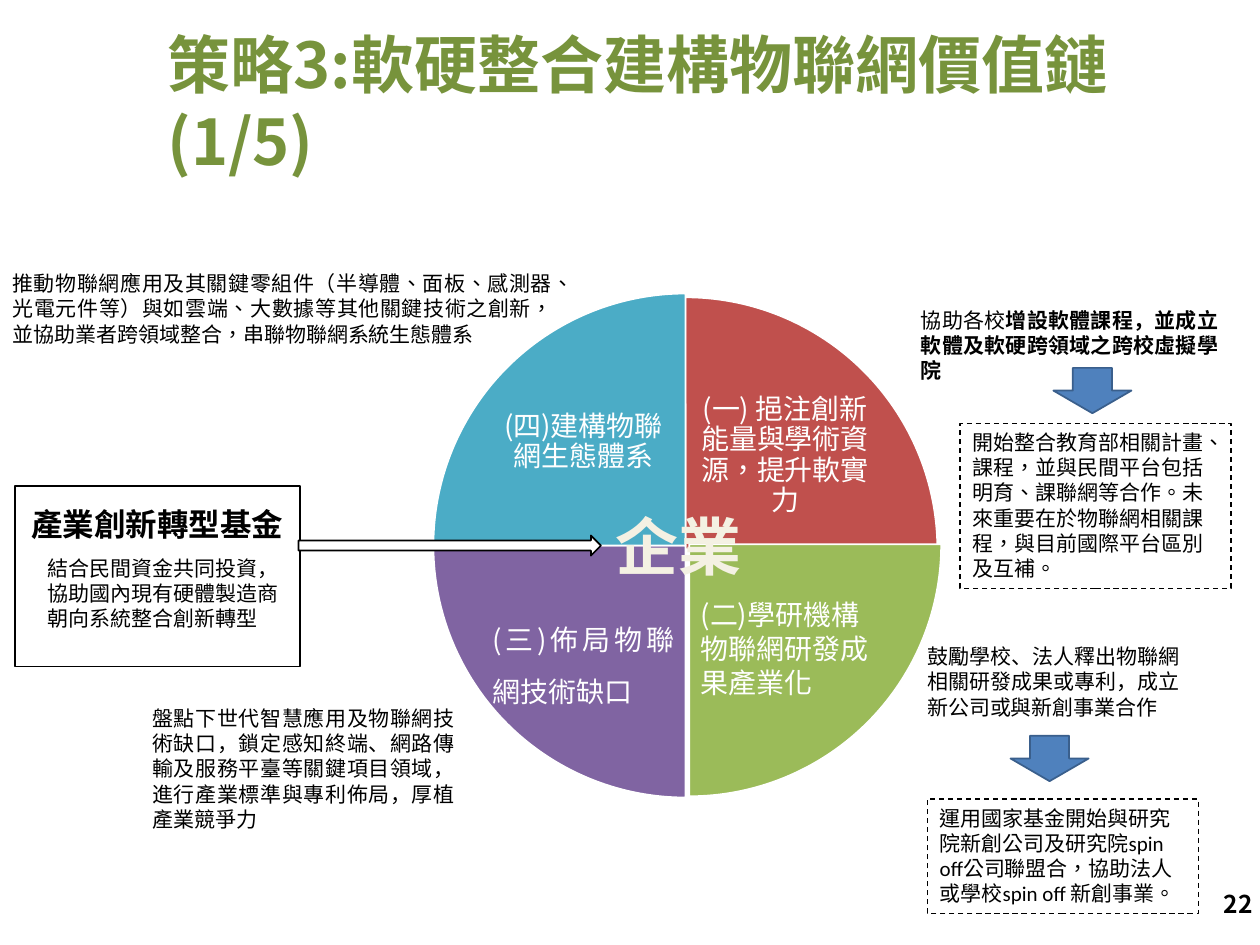
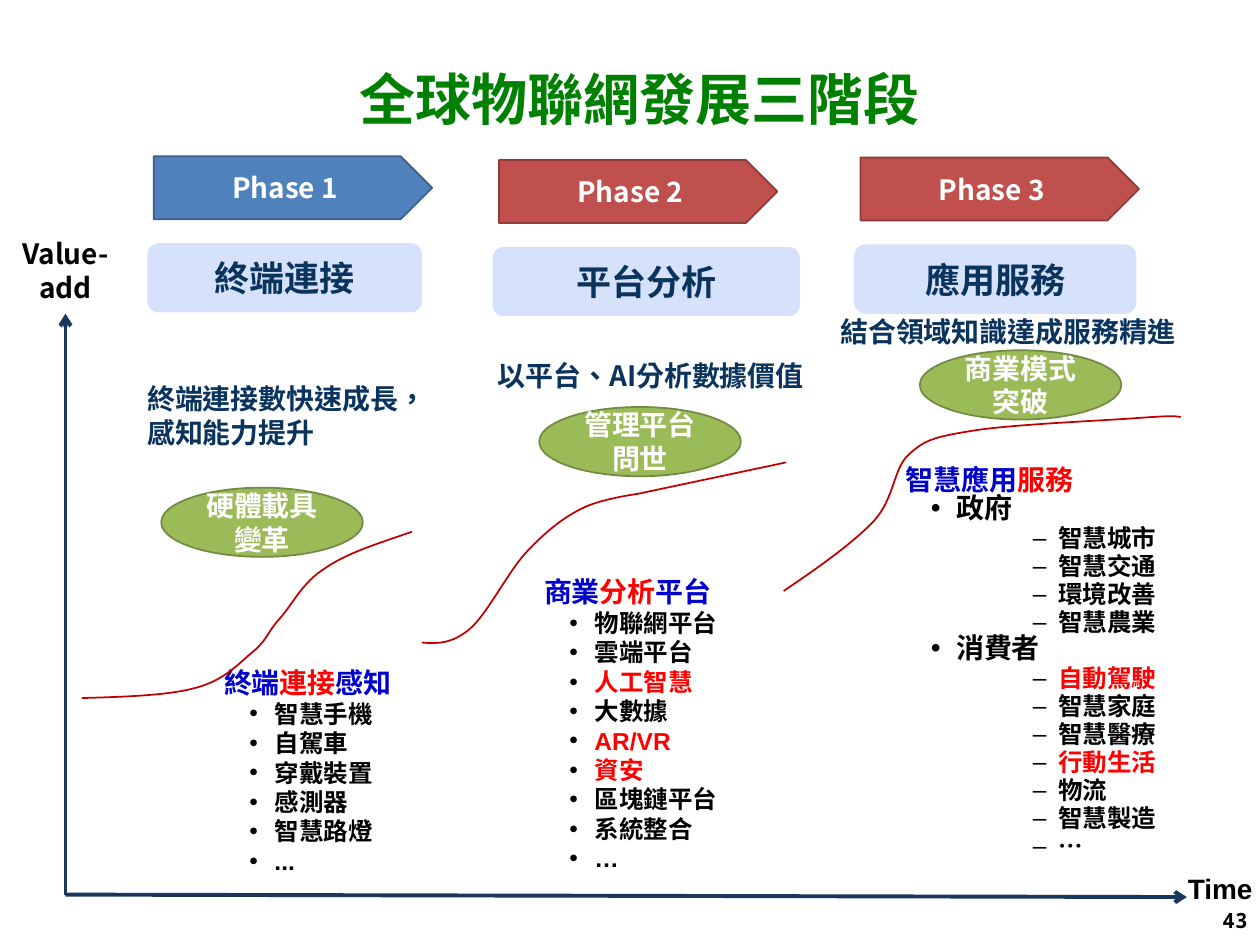
from dataclasses import dataclass

from lxml import etree
from pptx import Presentation
from pptx.dml.color import RGBColor
from pptx.enum.dml import MSO_LINE
from pptx.enum.shapes import MSO_CONNECTOR, MSO_SHAPE
from pptx.enum.text import MSO_ANCHOR, PP_ALIGN
from pptx.oxml.ns import qn
from pptx.util import Inches, Pt

LEFT, MID, RIGHT, JUST = PP_ALIGN.LEFT, PP_ALIGN.CENTER, PP_ALIGN.RIGHT, PP_ALIGN.JUSTIFY
TOP, CENTER = MSO_ANCHOR.TOP, MSO_ANCHOR.MIDDLE
RECT, ROUND, OVAL = MSO_SHAPE.RECTANGLE, MSO_SHAPE.ROUNDED_RECTANGLE, MSO_SHAPE.OVAL
PIE, PLATE = MSO_SHAPE.PIE, MSO_SHAPE.PENTAGON
DOWN, ARROW = MSO_SHAPE.DOWN_ARROW, MSO_SHAPE.RIGHT_ARROW
DASH, STRAIGHT = MSO_LINE.DASH, MSO_CONNECTOR.STRAIGHT


@dataclass(frozen=True)
class Theme:
    """Colours, faces and type sizes of the deck."""
    black: str = "000000"
    white: str = "FFFFFF"
    red: str = "C0504D"
    maroon: str = "8E3B39"
    green: str = "9BBB59"
    moss: str = "738A42"
    purple: str = "8064A2"
    teal: str = "4BACC6"
    blue: str = "4F81BD"
    steel: str = "3A5F8C"
    olive: str = "77933C"
    leaf: str = "008000"
    cream: str = "F4F1E3"
    ice: str = "D6E2FB"
    navy: str = "0A345D"
    axis: str = "17375E"
    curve: str = "C00000"
    royal: str = "0000CC"
    alert: str = "FF0000"
    cjk: str = "Noto Sans CJK SC"
    calm: str = "Calibri"
    plain: str = "Arial"
    mono: str = "Noto Sans Mono"
    tongue: str = "zh-TW"
    body: float = 12
    item: float = 14
    label: float = 16
    fund: float = 18
    card: float = 20
    head: float = 32
    title: float = 36
    lead: float = 1.2


T = Theme()

WEDGES = [
    (0, 0.04, 162, 0, T.red, "(一) 挹注創新能量與學術資源，提升軟實力", 2.05, 0.7, MID, 17.2),
    (0.03, 0, 0, 54, T.green, "(二)學研機構物聯網研發成果產業化", 2.1, 2.23, LEFT, None),
    (0, 0.01, 54, 108, T.purple, "(三)佈局物聯網技術缺口", 0.45, 2.29, JUST, 30),
    (0, 0.01, 108, 162, T.teal, "(四)建構物聯網生態體系", 0.45, 0.59, MID, 17.2),
]

STAGES = [
    dict(at=(1.17, 1.24), name="Phase 1", fill=T.blue, edge=T.steel, card="終端連接", wide=2.18,
         note=(-0.1, 1.74, 2.6), notes=["終端連接數快速成長，", "感知能力提升"],
         oval=(0.11, 2.63), leap="硬體載具變革", list=(0.51, 3.99, 2.29),
         head=["終端", "連接", "感知"], face=T.plain, lead=None, size=T.item,
         items=["•智慧手機", "•自駕車", "•穿戴裝置", "•感測器", "•智慧路燈", "•..."],
         start=(-0.52, 4.3), curve=[
             (0.34, -0.01), (0.68, -0.02), (0.9, -0.08), (1.13, -0.14), (1.24, -0.27),
             (1.36, -0.37), (1.47, -0.46), (1.47, -0.52), (1.57, -0.63), (1.67, -0.74),
             (1.75, -0.92), (1.93, -1.03), (2.1, -1.15), (2.36, -1.23), (2.62, -1.32)]),
    dict(at=(3.91, 1.27), name="Phase 2", fill=T.red, edge=T.maroon, card="平台分析", wide=2.44,
         note=(-0.06, 1.53, 2.67), notes=["以平台、AI分析數據價值"],
         oval=(0.37, 1.96), leap="管理平台問世", list=(0.31, 3.24, 1.8),
         head=["商業", "分析", "平台"], face=T.plain, lead=None, size=T.item,
         items=["•物聯網平台", "•雲端平台", "•人工智慧", "•大數據", "•AR/VR", "•資安",
                "•區塊鏈平台", "•系統整合", "•…"],
         start=(-0.56, 3.83), curve=[
             (0.12, 0.01), (0.24, 0.01), (0.38, -0.11), (0.52, -0.23), (0.68, -0.56),
             (0.83, -0.72), (0.98, -0.88), (1.12, -0.99), (1.26, -1.06), (1.41, -1.14),
             (1.71, -1.18), (1.71, -1.18), (2.89, -1.43)]),
    dict(at=(6.78, 1.25), name="Phase 3", fill=T.red, edge=T.maroon, card="應用服務", wide=2.24,
         note=(-0.21, 1.2, 3.09), notes=["結合領域知識達成服務精進"],
         oval=(0.52, 1.53), leap="商業模式突破", list=(0.31, 2.42, 3.03),
         head=["智慧應用", "服務"], face=T.cjk, lead=16, size=T.label,
         items=["•政府", "–智慧城市", "–智慧交通", "–環境改善", "–智慧農業", "•消費者",
                "–自動駕駛", "–智慧家庭", "–智慧醫療", "–行動生活", "–物流", "–智慧製造", "–…"],
         start=(-0.56, 3.44), curve=[
             (0.28, -0.19), (0.55, -0.38), (0.72, -0.56), (0.88, -0.74), (0.87, -0.97),
             (0.99, -1.08), (1.12, -1.2), (1.19, -1.22), (1.49, -1.27), (1.79, -1.32),
             (2.5, -1.35), (2.78, -1.37), (3.05, -1.39), (3.1, -1.39), (3.15, -1.38)]),
]
HOT = {"人工智慧", "AR/VR", "資安", "自動駕駛", "行動生活"}


def tint(text):
    """Turn a hex string into a colour."""
    return RGBColor.from_string(text)


def add_run(para, text, size, color, bold, face, lang):
    """Add one formatted run to a paragraph."""
    run = para.add_run()
    run.text = text
    for key, value in dict(size=Pt(size), bold=bold, name=face).items():
        setattr(run.font, key, value)
    run.font.color.rgb = tint(color)
    props = run.font._element
    props.find(qn("a:latin")).addnext(etree.Element(qn("a:ea"), typeface=T.cjk))
    if lang:
        props.set("lang", lang)


def add_mark(para, mark):
    """Give a paragraph a black bullet with a hanging indent."""
    props = para._p.get_or_add_pPr()
    props.set("marL", str(Inches(0.4 if mark == "•" else 1.21)))
    props.set("indent", str(Inches(-0.2)))
    shade = etree.SubElement(props, qn("a:buClr"))
    etree.SubElement(shade, qn("a:srgbClr"), val=T.black)
    etree.SubElement(props, qn("a:buFont"), typeface=T.plain)
    etree.SubElement(props, qn("a:buChar"), char=mark)


def write(shape, rows, size=T.body, color=T.black, bold=False, face=T.cjk, lang=None,
          align=LEFT, anchor=TOP, lead=None, inset=(0.1, 0.05)):
    """Fill a shape with rows; a row is text or a list of (text, changes)."""
    frame = shape.text_frame
    across, down = map(Inches, inset)
    form = dict(word_wrap=True, vertical_anchor=anchor, margin_left=across,
                margin_right=across, margin_top=down, margin_bottom=down)
    for key, value in form.items():
        setattr(frame, key, value)
    for spot, row in enumerate(rows):
        para = frame.add_paragraph() if spot else frame.paragraphs[0]
        runs = [(row, {})] if isinstance(row, str) else row
        looks = [dict(dict(size=size, color=color, bold=bold, face=face, lang=lang), **more)
                 for _, more in runs]
        mark = looks[0].pop("mark", None)
        para.alignment = align
        para.line_spacing = Pt(lead or round(looks[0]["size"] * T.lead, 1))
        if mark:
            add_mark(para, mark)
        for (text, _), look in zip(runs, looks):
            add_run(para, text, **look)


def add_text(slide, box, rows, **look):
    """Add a text box."""
    write(slide.shapes.add_textbox(*map(Inches, box)), rows, **look)


def add_form(slide, kind, box, fill=None, edge=None, width=1, dash=None):
    """Add a preset shape without shadow."""
    shape = slide.shapes.add_shape(kind, *map(Inches, box))
    paint(shape, fill, edge, width, dash)
    return shape


def paint(shape, fill, edge, width, dash=None):
    """Set the fill and outline of a shape."""
    shape.shadow.inherit = False
    for part, color in ((shape.fill, fill), (shape.line.fill, edge)):
        if color:
            part.solid()
            part.fore_color.rgb = tint(color)
        else:
            part.background()
    if edge:
        shape.line.width = Pt(width)
    if dash:
        shape.line.dash_style = dash


def add_title(slide, box, text, **look):
    """Add the slide title."""
    add_text(slide, box, [text], bold=True, anchor=CENTER, **look)


def add_page(slide, box, text, **look):
    """Add the page number."""
    add_text(slide, box, [text], bold=True, align=RIGHT, anchor=CENTER, **look)


def add_wheel(slide, x, y):
    """Draw the four wedges with their labels and the hub word."""
    for dx, dy, start, end, fill, *_ in WEDGES:
        wedge = add_form(slide, PIE, (x + dx, y + dy, 4, 4), fill, T.white)
        wedge.adjustments[0], wedge.adjustments[1] = start, end
    for *_, text, dx, dy, align, lead in WEDGES:
        add_text(slide, (x + dx, y + dy, 1.48, 1.19), [text], size=T.label, color=T.white,
                 align=align, anchor=CENTER, lead=lead, inset=(0.02, 0.02), lang=T.tongue)
    add_text(slide, (x + 1.35, y + 1.65, 1.31, 0.71), ["企業"], size=T.title,
             color=T.cream, bold=True, anchor=CENTER)


def add_fund(slide, x, y):
    """Draw the fund panel and its arrow to the hub."""
    add_form(slide, RECT, (x, y, 2.26, 1.43), edge=T.black)
    add_text(slide, (x + 0.03, y + 0.18, 2.3, 0.33), ["產業創新轉型基金"],
             size=T.fund, bold=True, lead=16)
    add_text(slide, (x + 0.16, y + 0.5, 2.14, 0.71),
             ["結合民間資金共同投資，協助國內現有硬體製造商朝向系統整合創新轉型"])
    add_form(slide, ARROW, (x + 2.25, y + 0.39, 2.4, 0.16), T.white, T.black)


def add_step(slide, x, y, high, dx, dy, text):
    """Draw a block arrow above a dashed box."""
    add_form(slide, DOWN, (x + dx, y + dy, 0.62, 0.36), T.blue, T.steel)
    panel = add_form(slide, RECT, (x, y, 2.15, high), edge=T.black, width=0.75, dash=DASH)
    write(panel, [text], face=T.calm, lang=T.tongue)


def draw_chain(slide):
    """Build the value chain slide."""
    add_wheel(slide, 3.44, 2.32)
    notes = [
        ((7.26, 5.06, 2.2, 0.71), None,
         "鼓勵學校、法人釋出物聯網相關研發成果或專利，成立新公司或與新創事業合作"),
        ((0, 2.1, 4.49, 0.71), T.tongue,
         "推動物聯網應用及其關鍵零組件（半導體、面板、感測器、光電元件等）與如雲端、"
         "大數據等其他關鍵技術之創新，並協助業者跨領域整合，串聯物聯網系統生態體系"),
        ((7.21, 2.39, 2.56, 0.71), None,
         [("協助各校", {}),
          ("增設軟體課程，並成立軟體及軟硬跨領域之跨校虛擬學院", dict(bold=True))]),
        ((1.11, 5.55, 2.6, 1.11), None,
         "盤點下世代智慧應用及物聯網技術缺口，鎖定感知終端、網路傳輸及服務平臺等"
         "關鍵項目領域，進行產業標準與專利佈局，厚植產業競爭力"),
    ]
    for box, lang, row in notes:
        add_text(slide, box, [row], align=JUST, lang=lang)
    add_fund(slide, 0.12, 3.86)
    add_step(slide, 7.62, 3.36, 1.31, 0.74, -0.44,
             "開始整合教育部相關計畫、課程，並與民間平台包括明育、課聯網等合作。"
             "未來重要在於物聯網相關課程，與目前國際平台區別及互補。")
    add_step(slide, 7.36, 6.34, 0.91, 0.66, -0.5,
             "運用國家基金開始與研究院新創公司及研究院spin off公司聯盟合，"
             "協助法人或學校spin off 新創事業。")
    add_title(slide, (1.23, 0.06, 8.69, 1.49), "策略3:軟硬整合建構物聯網價值鏈(1/5)",
              size=T.title, color=T.olive, lead=44)
    add_page(slide, (7.71, 6.97, 2.33, 0.4), "22", size=T.item)


def add_axis(slide, x, y, dx, dy):
    """Draw an axis arrow from its origin."""
    ends = map(Inches, (x, y, x + dx, y + dy))
    axis = slide.shapes.add_connector(STRAIGHT, *ends)
    axis.line.color.rgb = tint(T.axis)
    axis.line.width = Pt(2.25)
    etree.SubElement(axis.line._get_or_add_ln(), qn("a:tailEnd"), type="arrow")
    etree.SubElement(axis._element.spPr, qn("a:effectLst"))


def add_curve(slide, x, y, knots):
    """Draw a curve, taking each three knots as a cubic and the rest as lines."""
    pen = slide.shapes.build_freeform(Inches(x), Inches(y))
    pen.add_line_segments([(Inches(x + dx), Inches(y + dy)) for dx, dy in knots], close=False)
    shape = pen.convert_to_shape()
    legs = list(shape._element.iter(qn("a:lnTo")))
    for first in range(0, len(legs) - 2, 3):
        trio = legs[first:first + 3]
        bend = etree.Element(qn("a:cubicBezTo"))
        trio[0].addprevious(bend)
        for leg in trio:
            bend.append(leg[0])
            leg.getparent().remove(leg)
    paint(shape, None, T.curve, 1)


def add_list(slide, box, stage):
    """Write the coloured heading and bulleted items of a stage."""
    rows = [[(text, dict(size=T.label, color=T.alert if spot == 1 else T.royal))
             for spot, text in enumerate(stage["head"])]]
    for mark, text in ((item[0], item[1:]) for item in stage["items"]):
        look = dict(mark=mark, size=stage["size"] if mark == "•" else T.item,
                    color=T.alert if text in HOT else T.black)
        rows.append([(text, look)])
    add_text(slide, box, rows, bold=True, face=stage["face"], lead=stage["lead"])


def add_stage(slide, x, y, stage):
    """Draw one stage column relative to its top left corner."""
    def shift(key, *size):
        dx, dy, *rest = stage[key]
        return (x + dx, y + dy, *rest, *size)

    look = dict(size=T.label, color=T.white, bold=True, align=MID, anchor=CENTER)
    add_list(slide, shift("list", 3), stage)
    plate = add_form(slide, PLATE, (x + 0.05, y, 2.21, 0.5), stage["fill"], stage["edge"])
    write(plate, [stage["name"]], **look)
    card = add_form(slide, ROUND, (x, y + 0.69, stage["wide"], 0.55), T.ice)
    write(card, [stage["card"]], **dict(look, size=T.card, color=T.navy))
    add_curve(slide, *shift("start"), stage["curve"])
    oval = add_form(slide, OVAL, shift("oval", 1.6, 0.55), T.green, T.moss)
    write(oval, [stage["leap"]], **look)
    add_text(slide, shift("note", 0.64), stage["notes"], size=T.label, color=T.navy,
             bold=True, lang=T.tongue)


def draw_phases(slide):
    """Build the three phase slide."""
    add_title(slide, (0.77, 0.05, 8.62, 1.45), "全球物聯網發展三階段",
              size=T.head, color=T.leaf, align=MID)
    add_axis(slide, 0.52, 7.1, 8.9, 0.02)
    add_axis(slide, 0.52, 7.1, 0, -4.61)
    add_text(slide, (9.33, 6.87, 0.8, 0.37), ["Time"], size=T.label, bold=True, face=T.plain)
    add_text(slide, (0.01, 1.83, 1.02, 0.66), ["Value-add"], size=T.label, bold=True, align=MID)
    for stage in STAGES:
        add_stage(slide, *stage["at"], stage)
    add_page(slide, (7.75, 7.1, 2.25, 0.4), "43", face=T.mono)


def main():
    """Build and save the deck."""
    deck = Presentation()
    deck.slide_width, deck.slide_height = Inches(10), Inches(7.5)
    for draw in (draw_chain, draw_phases):
        draw(deck.slides.add_slide(deck.slide_layouts[6]))
    deck.save("out.pptx")


if __name__ == "__main__":
    main()
